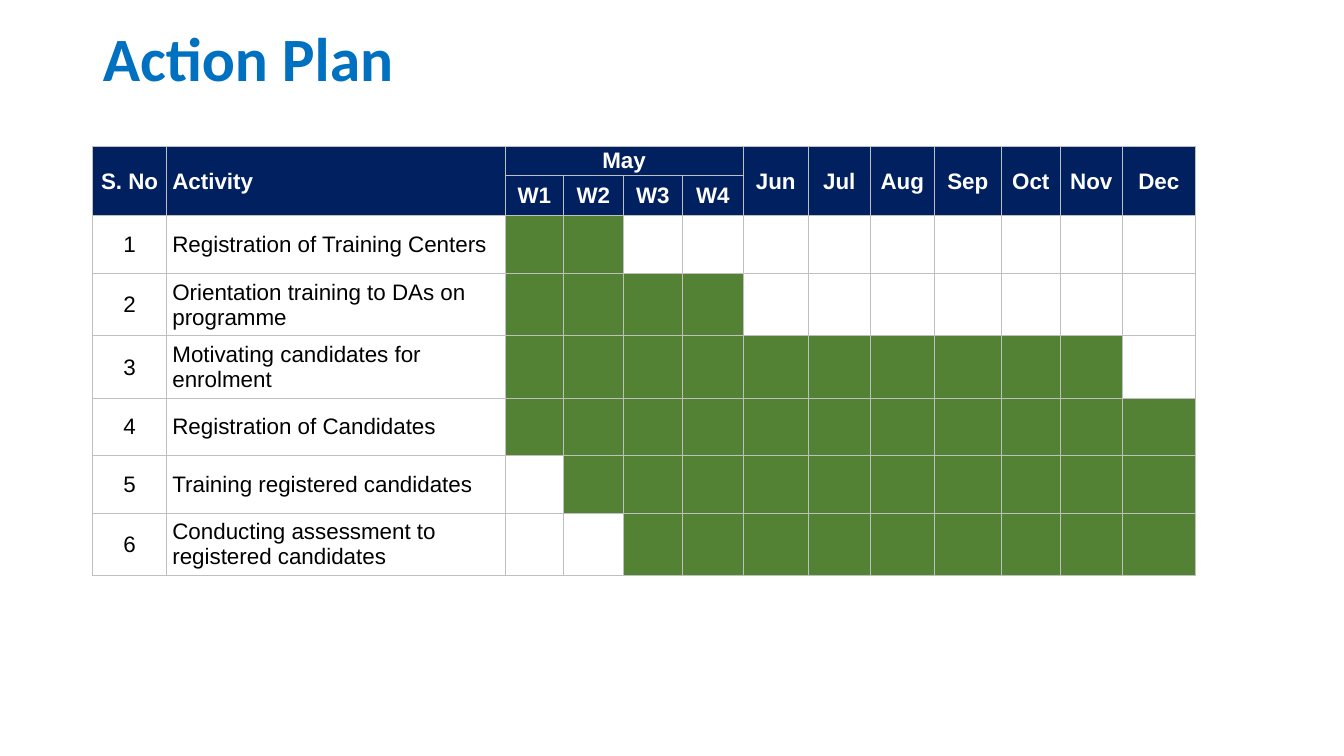
"""Build the Action Plan slide: a title above a Gantt-style schedule table."""
import pptx
import pptx.dml.color
import pptx.enum.text
import pptx.oxml.ns
import pptx.util
from lxml import etree
from pptx.util import Inches

COLORS = {
    "title": "0070C0",
    "header": "002060",
    "header_text": "FFFFFF",
    "text": "000000",
    "active": "548235",
    "border": "BFBFBF",
}
ALIGN = pptx.enum.text.PP_ALIGN
MIDDLE = pptx.enum.text.MSO_ANCHOR.MIDDLE

COL_WIDTHS = [0.73, 3.36, 0.58, 0.59, 0.59, 0.6, 0.65, 0.61, 0.64, 0.66, 0.59, 0.61, 0.73]
ROW_HEIGHTS = [0.29, 0.4, 0.57, 0.62, 0.62, 0.57, 0.57, 0.62]
WEEKS = ["W1", "W2", "W3", "W4"]
MONTHS = ["Jun", "Jul", "Aug", "Sep", "Oct", "Nov", "Dec"]
PERIODS = WEEKS + MONTHS
FIRST_PERIOD = 2
FIRST_MONTH = FIRST_PERIOD + len(WEEKS)
HEADER_ROWS = 2

ACTIVITIES = [
    ("Registration of Training Centers", "W1", "W2"),
    ("Orientation training to DAs on programme", "W1", "W4"),
    ("Motivating candidates for enrolment", "W1", "Nov"),
    ("Registration of Candidates", "W1", "Dec"),
    ("Training registered candidates", "W2", "Dec"),
    ("Conducting assessment to registered candidates", "W3", "Dec"),
]


def rgb(name):
    return pptx.dml.color.RGBColor.from_string(COLORS[name])


def add_title(s, text):
    sp = s.shapes.title
    sp.left, sp.top, sp.width, sp.height = Inches(0.92), Inches(-0.01), Inches(11.5), Inches(1.14)
    tf = sp.text_frame
    tf.text = text
    tf.vertical_anchor = MIDDLE
    p = tf.paragraphs[0]
    p.alignment = ALIGN.LEFT
    p.font.name, p.font.size, p.font.bold = "Calibri", pptx.util.Pt(44), True
    p.font.color.rgb = rgb("title")


def set_borders(cell):
    qn = pptx.oxml.ns.qn
    tcPr = cell._tc.get_or_add_tcPr()
    for side in ("a:lnL", "a:lnR", "a:lnT", "a:lnB"):
        ln = etree.SubElement(tcPr, qn(side), w=str(pptx.util.Pt(0.5)))
        fill = etree.SubElement(ln, qn("a:solidFill"))
        etree.SubElement(fill, qn("a:srgbClr"), val=COLORS["border"])


def format_cell(cell, fill=None):
    set_borders(cell)
    cell.vertical_anchor = MIDDLE
    cell.margin_left = cell.margin_right = cell.margin_top = Inches(0.01)
    cell.margin_bottom = 0
    if fill:
        cell.fill.solid()
        cell.fill.fore_color.rgb = rgb(fill)
    else:
        cell.fill.background()


def write_cell(cell, text, color="text", bold=False, align=ALIGN.CENTER):
    cell.text = text
    if align == ALIGN.LEFT:
        cell.margin_left = Inches(0.06)
    p = cell.text_frame.paragraphs[0]
    p.alignment = align
    p.font.name, p.font.size, p.font.bold = "Arial", pptx.util.Pt(16), bold
    p.font.color.rgb = rgb(color)


def fill_header(table):
    for row in range(HEADER_ROWS):
        for col in range(len(COL_WIDTHS)):
            format_cell(table.cell(row, col), "header")
    labels = {0: "S. No", 1: "Activity", **dict(enumerate(MONTHS, FIRST_MONTH))}
    for col, label in labels.items():
        table.cell(0, col).merge(table.cell(1, col))
        align = ALIGN.LEFT if label == "Activity" else ALIGN.CENTER
        write_cell(table.cell(0, col), label, "header_text", True, align)
    table.cell(0, FIRST_PERIOD).merge(table.cell(0, FIRST_MONTH - 1))
    write_cell(table.cell(0, FIRST_PERIOD), "May", "header_text", True)
    for col, week in enumerate(WEEKS, FIRST_PERIOD):
        write_cell(table.cell(1, col), week, "header_text", True)


def fill_activity(table, number, activity, start, end):
    row = HEADER_ROWS + number - 1
    active = range(PERIODS.index(start), PERIODS.index(end) + 1)
    for col in range(len(COL_WIDTHS)):
        format_cell(table.cell(row, col), "active" if col - FIRST_PERIOD in active else None)
    write_cell(table.cell(row, 0), str(number))
    write_cell(table.cell(row, 1), activity, align=ALIGN.LEFT)


def add_schedule(s):
    frame = s.shapes.add_table(
        len(ROW_HEIGHTS), len(COL_WIDTHS), Inches(0.92), Inches(1.45),
        Inches(sum(COL_WIDTHS)), Inches(sum(ROW_HEIGHTS)))
    table = frame.table
    table.horz_banding = False
    for column, width in zip(table.columns, COL_WIDTHS):
        column.width = Inches(width)
    for row, height in zip(table.rows, ROW_HEIGHTS):
        row.height = Inches(height)
    fill_header(table)
    for number, (activity, start, end) in enumerate(ACTIVITIES, 1):
        fill_activity(table, number, activity, start, end)


def main():
    prs = pptx.Presentation()
    prs.slide_width, prs.slide_height = Inches(13.33), Inches(7.5)
    s = prs.slides.add_slide(prs.slide_layouts[5])
    add_title(s, "Action Plan")
    add_schedule(s)
    prs.save("out.pptx")


if __name__ == "__main__":
    main()
